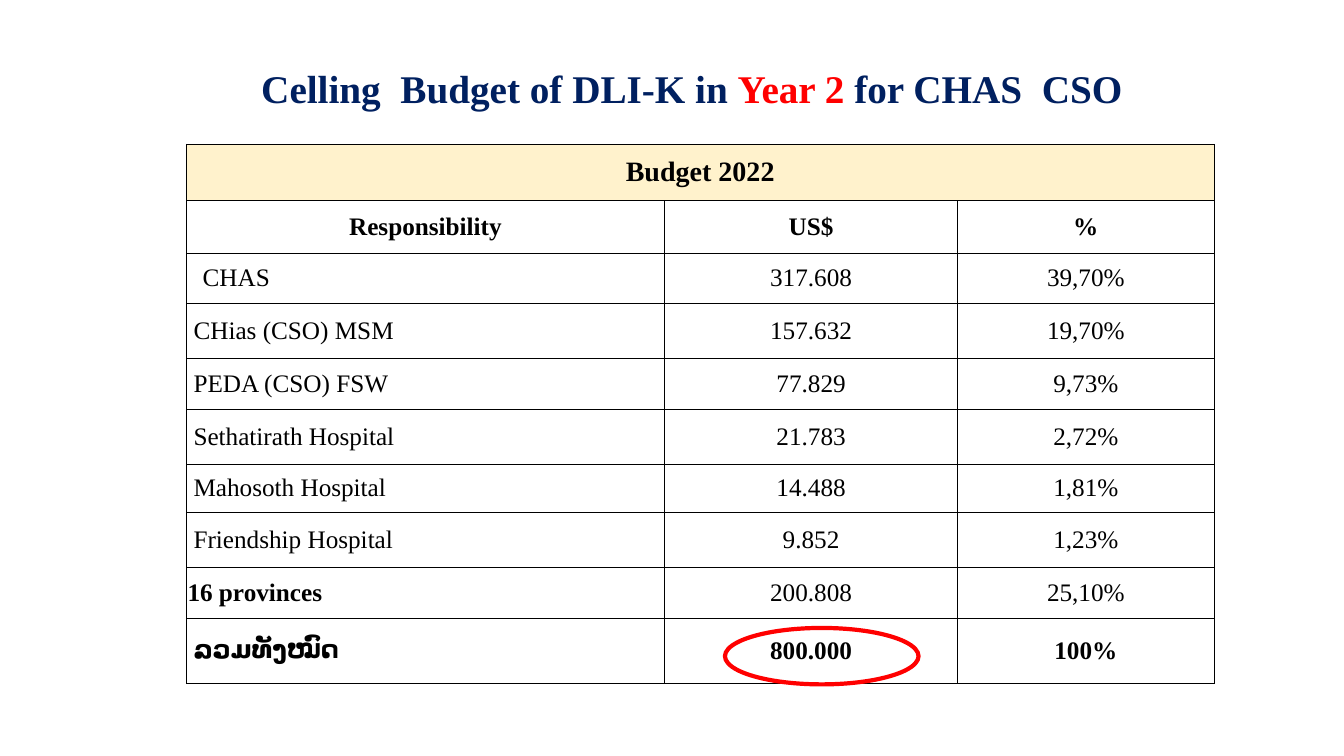
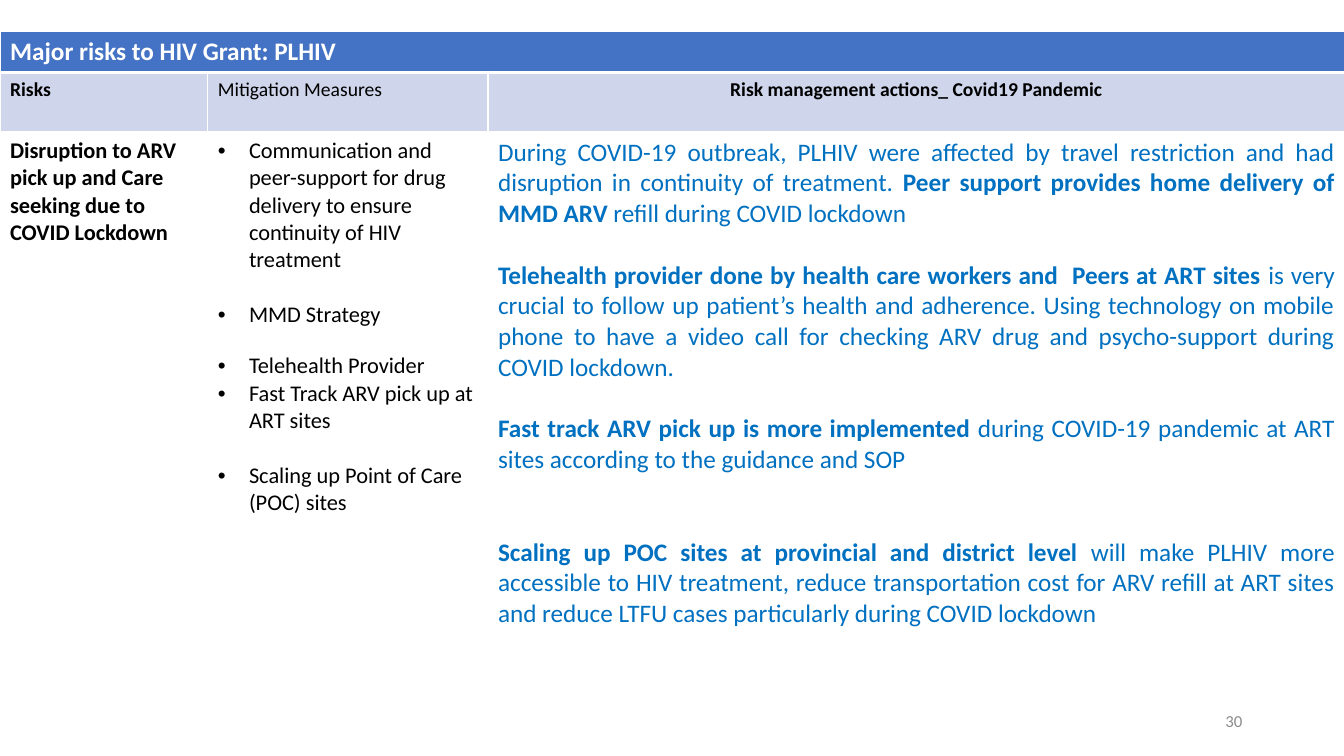
from dataclasses import dataclass

from lxml import etree
from pptx import Presentation
from pptx.dml.color import RGBColor
from pptx.enum.shapes import MSO_SHAPE
from pptx.enum.text import MSO_ANCHOR, MSO_AUTO_SIZE, PP_ALIGN
from pptx.oxml.ns import qn
from pptx.util import Inches, Pt

LEFT, MID, RIGHT = PP_ALIGN.LEFT, PP_ALIGN.CENTER, PP_ALIGN.RIGHT
JUST = PP_ALIGN.JUSTIFY
TOP, CORE = MSO_ANCHOR.TOP, MSO_ANCHOR.MIDDLE
FIXED = MSO_AUTO_SIZE.NONE
OVAL = MSO_SHAPE.OVAL
TITLED, BLANK = 5, 6

COLORS = {
    "black": "000000", "white": "FFFFFF", "navy": "002060", "red": "FF0000",
    "cream": "FFF2CC", "blue": "4472C4", "pale": "CFD5EA", "sky": "0070C0",
    "gray": "8C8C8C",
}
SERIF, SANS = "Times New Roman", "Calibri"
TITLE = {"name": SERIF, "size": Pt(28), "bold": True}
HEAD = {"name": SERIF, "size": Pt(20), "bold": True}
BOLD = {"name": SERIF, "size": Pt(18), "bold": True}
BODY = {"name": SERIF, "size": Pt(18), "bold": False}
BAND = {"name": SANS, "size": Pt(18), "bold": True}
LABEL = {"name": SANS, "size": Pt(14), "bold": True}
PLAIN = {"name": SANS, "size": Pt(14), "bold": False}
RISK = {"name": SANS, "size": Pt(16), "bold": True}
STEP = {"name": SANS, "size": Pt(16), "bold": False}
ACT = {"name": SANS, "size": Pt(18), "bold": False}
LEAD = {"name": SANS, "size": Pt(18), "bold": True}
FOOT = {"name": SANS, "size": Pt(12), "bold": False}


@dataclass
class Run:
    text: str
    form: dict
    color: str = "black"


@dataclass
class Para:
    runs: list[Run]
    align: PP_ALIGN = LEFT
    gap: float = 0
    dot: bool = False


@dataclass
class Cell:
    paras: list[Para]
    fill: str = ""
    inset: float = 0.1
    pad: float = 0.05
    anchor: MSO_ANCHOR = TOP


@dataclass
class Share:
    name: str
    sum: str
    rate: str
    height: float
    inset: float = 0.07
    first: bool = False
    last: bool = False


def color(key: str) -> RGBColor:
    return RGBColor.from_string(COLORS[key])


def write(frame, paras: list[Para]) -> None:
    for i, para in enumerate(paras):
        line = frame.paragraphs[0] if i == 0 else frame.add_paragraph()
        line.alignment = para.align
        if para.gap:
            line.space_before = Pt(para.gap)
        if para.dot:
            props = line._p.get_or_add_pPr()
            props.set("marL", str(Inches(0.31)))
            props.set("indent", str(-Inches(0.31)))
            etree.SubElement(props, qn("a:buFont"), typeface="Arial")
            etree.SubElement(props, qn("a:buChar"), char="•")
        for item in para.runs:
            run = line.add_run()
            run.text = item.text
            for key, value in item.form.items():
                setattr(run.font, key, value)
            run.font.color.rgb = color(item.color)


def edge(cell, side: str, key: str, width: float) -> None:
    props = cell._tc.get_or_add_tcPr()
    for old in props.findall(qn("a:ln" + side)):
        props.remove(old)
    line = etree.Element(qn("a:ln" + side), w=str(Pt(width)))
    solid = etree.SubElement(line, qn("a:solidFill"))
    etree.SubElement(solid, qn("a:srgbClr"), val=COLORS[key])
    props.insert("LRTB".index(side), line)


def fill_cell(cell, item: Cell) -> None:
    cell.margin_left = cell.margin_right = Inches(item.inset)
    cell.margin_top = cell.margin_bottom = Inches(item.pad)
    cell.vertical_anchor = item.anchor
    write(cell.text_frame, item.paras)


def add_grid(slide, spot: tuple, cols: list, heights: list,
             rows: list[list[Cell]], rule: tuple):
    frame = slide.shapes.add_table(
        len(rows), len(cols), Inches(spot[0]), Inches(spot[1]),
        Inches(sum(cols)), Inches(sum(heights)))
    table = frame.table
    table.first_row = table.horz_banding = False
    for col, width in zip(table.columns, cols):
        col.width = Inches(width)
    for row, height in zip(table.rows, heights):
        row.height = Inches(height)
    table.cell(0, 0).merge(table.cell(0, len(cols) - 1))
    for r, items in enumerate(rows):
        for c in range(len(cols)):
            cell = table.cell(r, c)
            item = items[min(c, len(items) - 1)]
            if item.fill:
                cell.fill.solid()
                cell.fill.fore_color.rgb = color(item.fill)
            else:
                cell.fill.background()
            for side in "LRTB":
                edge(cell, side, *rule)
            if c < len(items):
                fill_cell(cell, item)
    return table


def money(text: str, form: dict, align: PP_ALIGN = MID,
          inset: float = 0.07, fill: str = "") -> Cell:
    return Cell([Para([Run(text, form)], align)], fill, inset, 0, CORE)


def budget(deck) -> None:
    slide = deck.slides.add_slide(deck.slide_layouts[TITLED])
    title = slide.shapes.title
    title.left, title.top = Inches(0.86), Inches(0.35)
    title.width, title.height = Inches(12.1), Inches(0.81)
    frame = title.text_frame
    frame.word_wrap = True
    frame.auto_size = FIXED
    frame.vertical_anchor = CORE
    write(frame, [Para([
        Run("Celling  Budget of DLI-K in ", TITLE, "navy"),
        Run("Year 2 ", TITLE, "red"),
        Run("for CHAS  CSO ", TITLE, "navy")], MID)])
    frame.paragraphs[0].line_spacing = 1.5

    shares = [
        Share("Responsibility", "US$", "%", 0.52, 0.01, first=True),
        Share("CHAS", "317.608", "39,70%", 0.5, 0.16),
        Share("CHias (CSO) MSM", "157.632", "19,70%", 0.55),
        Share("PEDA (CSO) FSW", "77.829", "9,73%", 0.5),
        Share("Sethatirath Hospital", "21.783", "2,72%", 0.55),
        Share("Mahosoth Hospital", "14.488", "1,81%", 0.47),
        Share("Friendship Hospital", "9.852", "1,23%", 0.55),
        Share("16 provinces", "200.808", "25,10%", 0.5, 0.01),
        Share("ລວມທັງໝົດ", "800.000", "100%", 0.65, last=True),
    ]
    rows = [[money("Budget 2022", HEAD, fill="cream")]]
    for share in shares:
        form = BOLD if share.first or share.last else BODY
        lead = BOLD if share.inset == 0.01 else form
        align = MID if share.first else LEFT
        rows.append([money(share.name, lead, align, share.inset),
                     money(share.sum, form), money(share.rate, form)])
    heights = [0.56] + [share.height for share in shares]
    add_grid(slide, (1.85, 1.43), [4.74, 2.91, 2.54], heights, rows,
             ("black", 0.5))

    ring = slide.shapes.add_shape(OVAL, Inches(7.19), Inches(6.23),
                                  Inches(1.92), Inches(0.56))
    ring.shadow.inherit = False
    ring.fill.background()
    ring.line.color.rgb = color("red")
    ring.line.width = Pt(3)


def risks(deck) -> None:
    slide = deck.slides.add_slide(deck.slide_layouts[BLANK])
    steps = [
        ("Communication and peer-support for drug delivery to ensure "
         "continuity of HIV treatment", 0),
        ("MMD Strategy", 19.5),
        ("Telehealth Provider", 17),
        ("Fast Track ARV pick up at ART sites", 0),
        ("Scaling up Point of Care (POC) sites", 19.5),
    ]
    acts = [
        ([("During COVID-19 outbreak, PLHIV were affected by travel "
           "restriction and had disruption in continuity of treatment. ", ACT),
          ("Peer support provides home delivery of MMD ARV", LEAD),
          (" refill during COVID lockdown", ACT)], 0),
        ([("Telehealth provider done by health care workers and  Peers at "
           "ART sites ", LEAD),
          ("is very crucial to follow up patient’s health and adherence. "
           "Using technology on mobile phone to have a video call for "
           "checking ARV drug and psycho-support during COVID lockdown.",
           ACT)], 22),
        ([("Fast track ARV pick up is more implemented", LEAD),
          (" during COVID-19 pandemic at ART sites according to the "
           "guidance and SOP", ACT)], 22),
        ([("Scaling up POC sites at provincial and district level ", LEAD),
          ("will make PLHIV more accessible to HIV treatment, reduce "
           "transportation cost for ARV refill at ART sites and reduce LTFU "
           "cases particularly during COVID lockdown", ACT)], 44),
    ]
    heads = [("Risks", LABEL, LEFT), ("Mitigation Measures", PLAIN, LEFT),
             ("Risk management actions_ Covid19 Pandemic", LABEL, MID)]
    rows = [
        [Cell([Para([Run("Major risks to HIV Grant: PLHIV", BAND, "white")])],
              "blue")],
        [Cell([Para([Run(text, form)], align)], "pale")
         for text, form, align in heads],
        [Cell([Para([Run("Disruption to ARV pick up and Care seeking due to "
                         "COVID Lockdown", RISK)])]),
         Cell([Para([Run(text, STEP)], gap=gap, dot=True)
               for text, gap in steps]),
         Cell([Para([Run(text, form, "sky") for text, form in bits],
                    JUST, gap) for bits, gap in acts])],
    ]
    table = add_grid(slide, (0, 0.31), [2.06, 2.78, 8.5], [0.41, 0.59, 5.36],
                     rows, ("white", 1))
    for c in range(3):
        edge(table.cell(0, c), "B", "white", 3)
        edge(table.cell(1, c), "T", "white", 3)

    box = slide.shapes.add_textbox(Inches(9.42), Inches(6.95),
                                   Inches(3), Inches(0.4))
    box.text_frame.word_wrap = True
    box.text_frame.vertical_anchor = CORE
    write(box.text_frame, [Para([Run("30", FOOT, "gray")], RIGHT)])


def main() -> None:
    deck = Presentation()
    deck.slide_width, deck.slide_height = Inches(13.33), Inches(7.5)
    budget(deck)
    risks(deck)
    deck.save("out.pptx")


if __name__ == "__main__":
    main()
